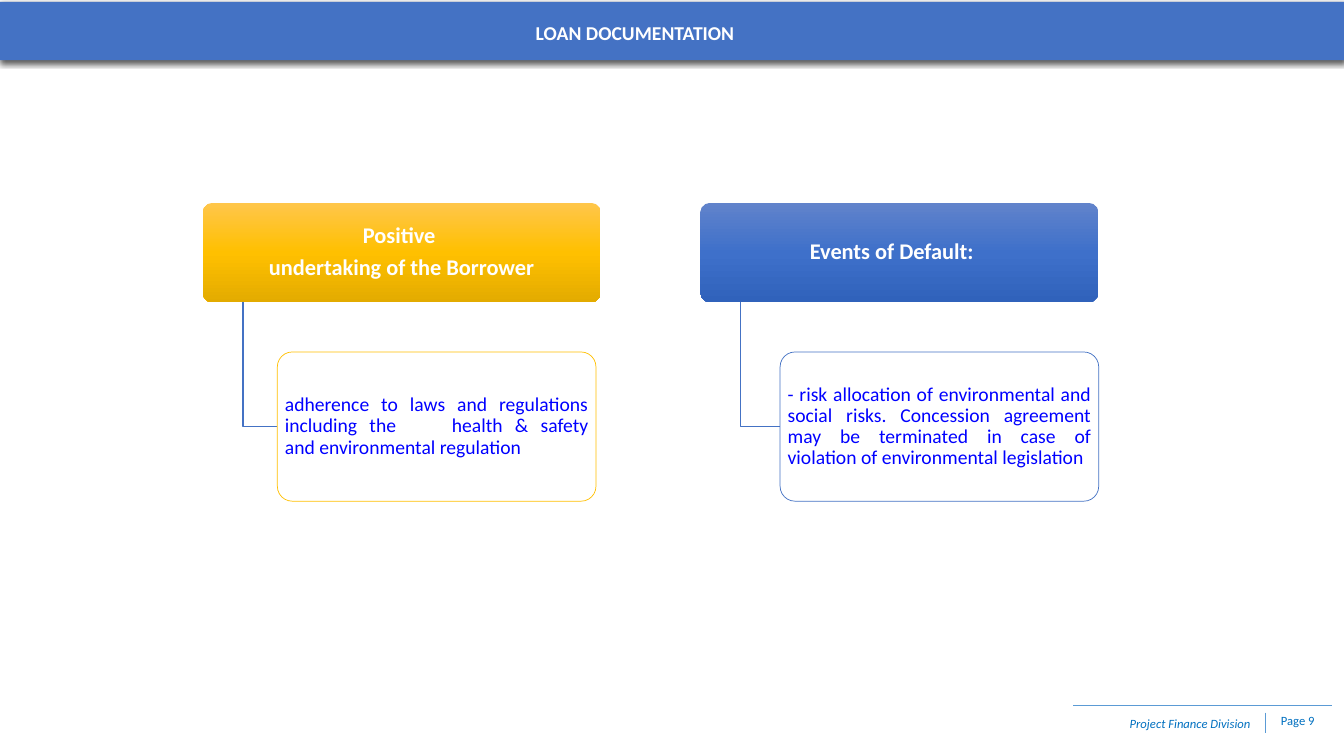
import copy

import lxml.etree
import pptx
import pptx.dml.color
import pptx.enum.shapes
import pptx.enum.text
import pptx.oxml.ns
import pptx.util

Cm, Pt = pptx.util.Cm, pptx.util.Pt
SHAPE = pptx.enum.shapes.MSO_SHAPE
ALIGN = pptx.enum.text.PP_ALIGN
qn = pptx.oxml.ns.qn


def rgb(value):
    return pptx.dml.color.RGBColor.from_string(value)


class Deck:
    font = "Calibri"
    blue, light_blue, footer = "4472C4", "5B9BD5", "0070C0"
    gold, white, body = "FFC000", "FFFFFF", "0000FF"
    tight = (0.08, 0.05, 0.08, 0.05)

    def __init__(self, prs):
        self.slide = prs.slides.add_slide(prs.slide_layouts[6])

    def fill_text(self, sp, lines, size, color, align=ALIGN.CENTER, insets=None,
                  para=None, **font):
        tf = sp.text_frame
        tf.word_wrap = True
        tf.vertical_anchor = pptx.enum.text.MSO_ANCHOR.MIDDLE
        if insets:
            for side, inset in zip(("left", "top", "right", "bottom"), insets):
                setattr(tf, f"margin_{side}", Cm(inset))
        for i, line in enumerate(lines):
            p = tf.add_paragraph() if i else tf.paragraphs[0]
            for name, value in {"alignment": align, **(para or {})}.items():
                setattr(p, name, value)
            r = p.add_run()
            r.text = line
            for name, value in {"name": self.font, "size": Pt(size), **font}.items():
                setattr(r.font, name, value)
            r.font.color.rgb = rgb(color)

    def text(self, box, lines, size, color, **style):
        sp = self.slide.shapes.add_textbox(*map(Cm, box))
        self.fill_text(sp, lines, size, color, **style)

    def shape(self, kind, box, fill=None, line=None, width=0.5):
        sp = self.slide.shapes.add_shape(kind, *map(Cm, box))
        sp.shadow.inherit = False
        if kind == SHAPE.ROUNDED_RECTANGLE:
            sp.adjustments[0] = 0.1
        if fill:
            sp.fill.solid()
            sp.fill.fore_color.rgb = rgb(fill)
        self.outline(sp, line, width)
        return sp

    def outline(self, sp, color, width):
        if color:
            sp.line.color.rgb = rgb(color)
            sp.line.width = Pt(width)
        else:
            sp.line.fill.background()

    def gradient(self, sp, colors):
        sp.fill.gradient()
        sp.fill.gradient_angle = 270
        first = sp._element.spPr.find(".//" + qn("a:gs"))
        first.addnext(copy.deepcopy(first))
        for i, (stop, color) in enumerate(zip(sp.fill.gradient_stops, colors)):
            stop.color.rgb = rgb(color)
            stop.position = i / 2

    def alpha(self, parent, percent):
        clr = parent.find(".//" + qn("a:srgbClr"))
        lxml.etree.SubElement(clr, qn("a:alpha"), val=str(percent * 1000))

    def drop_shadow(self, sp):
        effects = sp._element.spPr.find(qn("a:effectLst"))
        shadow = lxml.etree.SubElement(
            effects, qn("a:outerShdw"), blurRad=str(Pt(4.5)), dist=str(Pt(1.5)),
            dir="5400000", algn="ctr", rotWithShape="0")
        lxml.etree.SubElement(shadow, qn("a:srgbClr"), val="000000")
        self.alpha(shadow, 63)

    def line(self, x1, y1, x2, y2):
        cx = self.slide.shapes.add_connector(
            pptx.enum.shapes.MSO_CONNECTOR.STRAIGHT, *map(Cm, (x1, y1, x2, y2)))
        self.outline(cx, self.light_blue, 0.5)
        lxml.etree.SubElement(cx._element.spPr, qn("a:effectLst"))

    def elbow(self, x1, y1, x2, y2):
        builder = self.slide.shapes.build_freeform(Cm(x1), Cm(y1))
        builder.add_line_segments(
            [(Cm(x1), Cm(y2)), (Cm(x2), Cm(y2))], close=False)
        sp = builder.convert_to_shape()
        sp.shadow.inherit = False
        sp.fill.background()
        self.outline(sp, self.blue, 1)

    def branch(self, left, body_left, heading, detail, colors, edge, right_inset):
        para = {"line_spacing": 0.9}
        head = self.shape(SHAPE.ROUNDED_RECTANGLE, (left, 5.11, 10.03, 2.51))
        self.gradient(head, colors)
        insets = (0.08, 0.05, right_inset, 0.05)
        self.fill_text(head, heading, 16, self.white, insets=insets, bold=True,
                       para={**para, "space_after": Pt(5.6)})
        self.elbow(left + 1.01, 7.62, body_left, 10.75)
        card = self.shape(SHAPE.ROUNDED_RECTANGLE, (body_left, 8.87, 8.03, 3.76),
                          self.white, edge)
        self.alpha(card._element.spPr.find(qn("a:solidFill")), 90)
        self.fill_text(card, [detail], 14, self.body, ALIGN.JUSTIFY, self.tight,
                       {**para, "space_after": Pt(4.9)})


def main():
    prs = pptx.Presentation()
    prs.slide_width, prs.slide_height = Cm(33.87), Cm(19.05)
    s = Deck(prs)

    # Footer
    s.text((28.22, 17.73, 3.61, 1.02), ["Project Finance Division"], 9, s.footer,
           align=ALIGN.LEFT, italic=True)
    s.text((31.83, 17.65, 1.75, 1.02), ["Page 9"], 9, s.footer)
    s.line(27.05, 17.78, 33.58, 17.78)
    s.line(31.9, 17.96, 31.9, 18.47)

    # Title band
    band = s.shape(SHAPE.RECTANGLE, (0, 0.05, 33.87, 1.47), s.blue)
    s.drop_shadow(band)
    s.text((4.32, 0.05, 23.37, 1.6), ["LOAN DOCUMENTATION"], 14, s.white,
           para={"line_spacing": 0.9}, bold=True)

    # Two branches
    s.branch(5.11, 6.99, ["Positive ", "undertaking of the Borrower"],
             "adherence to laws and regulations including the \thealth & safety "
             "and environmental regulation",
             ("FFC64B", s.gold, "E3AB00"), s.gold, 0.08)
    s.branch(17.65, 19.66, ["Events of Default:"],
             "- risk allocation of environmental and social risks. Concession "
             "agreement may be terminated in case of violation of environmental "
             "legislation",
             ("6183CB", "3E70CA", "3062BB"), s.blue, 0.46)

    prs.save("out.pptx")


if __name__ == "__main__":
    main()
